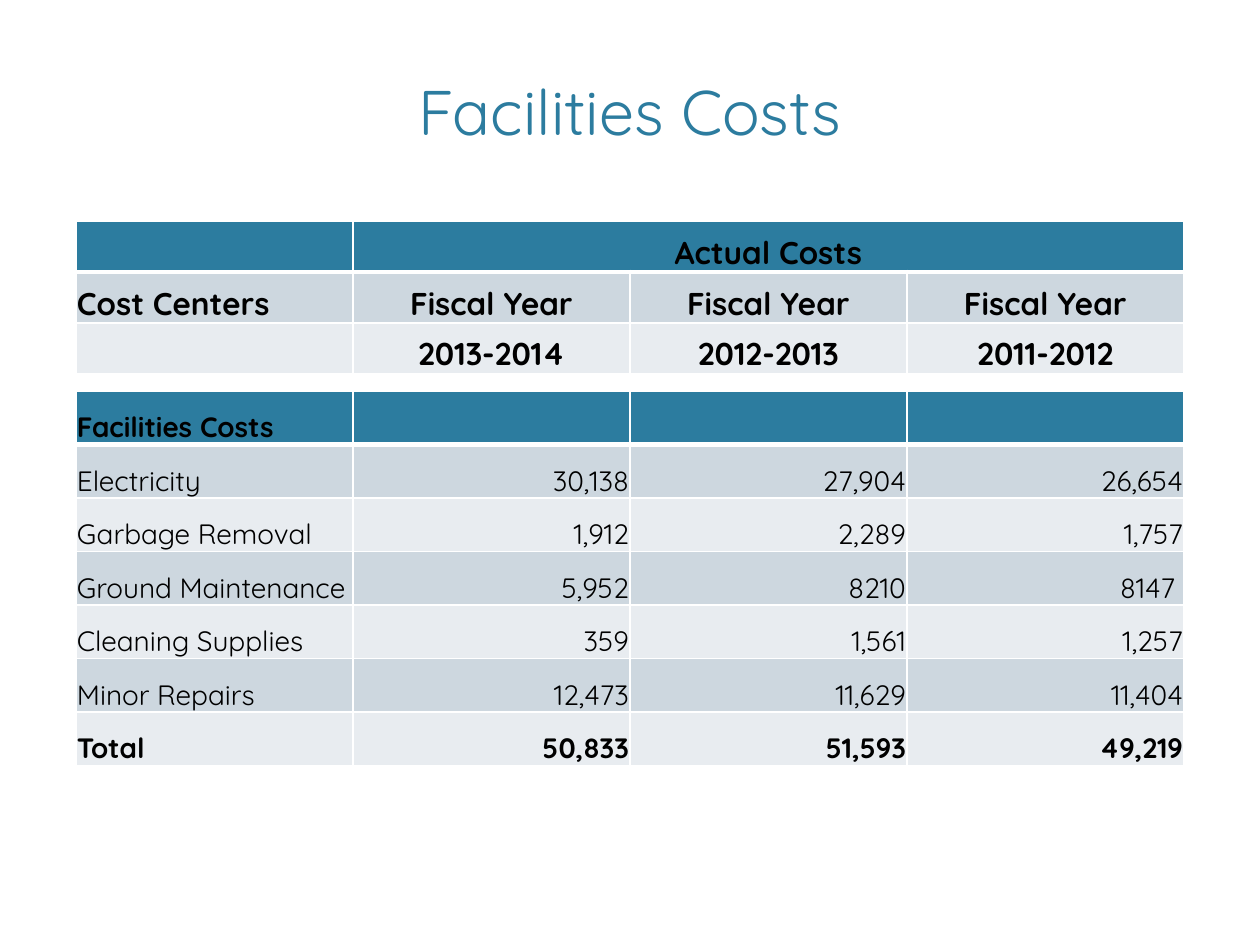
import pptx
import pptx.dml.color
import pptx.enum.text
import pptx.oxml.ns
import pptx.util
import lxml.etree

TITLE = "Facilities Costs"
TITLE_BOX = (76, 63, 1108, 91)
FONT = "Quicksand"
COLORS = {"accent": "2C7C9F", "odd": "CDD7DF", "even": "E8ECF0",
          "text": "000000", "border": "FFFFFF"}
ALIGN = pptx.enum.text.PP_ALIGN
TABLES = [
    {
        "box": (76, 221, 1108, 153), "size": 18, "align": ALIGN.CENTER,
        "merge": ((0, 1), (0, 3)), "bold_rows": (0, 1, 2),
        "rows": [
            ("", "Actual Costs", "", ""),
            ("Cost Centers", "Fiscal Year", "Fiscal Year", "Fiscal Year"),
            ("", "2013-2014", "2012-2013", "2011-2012"),
        ],
    },
    {
        "box": (76, 391, 1108, 375), "size": 16, "align": ALIGN.RIGHT,
        "merge": None, "bold_rows": (0, 6),
        "rows": [
            ("Facilities Costs", "", "", ""),
            ("Electricity", "30,138", "27,904", "26,654"),
            ("Garbage Removal", "1,912", "2,289", "1,757"),
            ("Ground Maintenance", "5,952", "8210", "8147 "),
            ("Cleaning Supplies", "359", "1,561", "1,257"),
            ("Minor Repairs", "12,473", "11,629", "11,404"),
            ("Total", "50,833", "51,593", "49,219"),
        ],
    },
]
SCALE = 914400 / 126


def px(length):
    return pptx.util.Emu(round(length * SCALE))


def rgb(name):
    return pptx.dml.color.RGBColor.from_string(COLORS[name])


def style_text(frame, size, color, align, bold):
    for para in frame.paragraphs:
        para.alignment = align
        for span in para.runs:
            span.font.name = FONT
            span.font.size = pptx.util.Pt(size)
            span.font.bold = bold
            span.font.color.rgb = rgb(color)


def add_borders(cell, widths):
    qn = pptx.oxml.ns.qn
    properties = cell._tc.get_or_add_tcPr()
    for side, points in widths.items():
        line = lxml.etree.SubElement(properties, qn("a:ln" + side),
                                     w=str(pptx.util.Pt(points)))
        fill = lxml.etree.SubElement(line, qn("a:solidFill"))
        lxml.etree.SubElement(fill, qn("a:srgbClr"), val=COLORS["border"])


def add_cost_table(page, data):
    rows = data["rows"]
    columns = len(rows[0])
    left, top, width, height = data["box"]
    frame = page.shapes.add_table(len(rows), columns,
                                  *map(px, (left, top, width, height)))
    table = frame.table
    for column in table.columns:
        column.width = px(width / columns)
    for row in table.rows:
        row.height = px(height / len(rows))
    if data["merge"]:
        first, last = data["merge"]
        table.cell(*first).merge(table.cell(*last))
    for r, texts in enumerate(rows):
        fill = "accent" if r == 0 else ("even", "odd")[r % 2]
        widths = {"L": 1, "R": 1, "T": 3 if r == 1 else 1, "B": 3 if r == 0 else 1}
        for c, text in enumerate(texts):
            cell = table.cell(r, c)
            add_borders(cell, widths)
            cell.fill.solid()
            cell.fill.fore_color.rgb = rgb(fill)
            cell.margin_left = cell.margin_right = cell.margin_top = px(1)
            cell.margin_bottom = 0
            cell.vertical_anchor = pptx.enum.text.MSO_ANCHOR.BOTTOM
            if text:
                cell.text_frame.text = text
                style_text(cell.text_frame, data["size"], "text",
                           data["align"] if c else ALIGN.LEFT, r in data["bold_rows"])


def main():
    deck = pptx.Presentation()
    deck.slide_width, deck.slide_height = px(1260), px(945)
    page = deck.slides.add_slide(deck.slide_layouts[5])
    title = page.shapes.title
    title.left, title.top, title.width, title.height = map(px, TITLE_BOX)
    title.text_frame.text = TITLE
    title.text_frame.vertical_anchor = pptx.enum.text.MSO_ANCHOR.BOTTOM
    style_text(title.text_frame, 36, "accent", ALIGN.CENTER, False)
    for data in TABLES:
        add_cost_table(page, data)
    deck.save("out.pptx")


if __name__ == "__main__":
    main()
